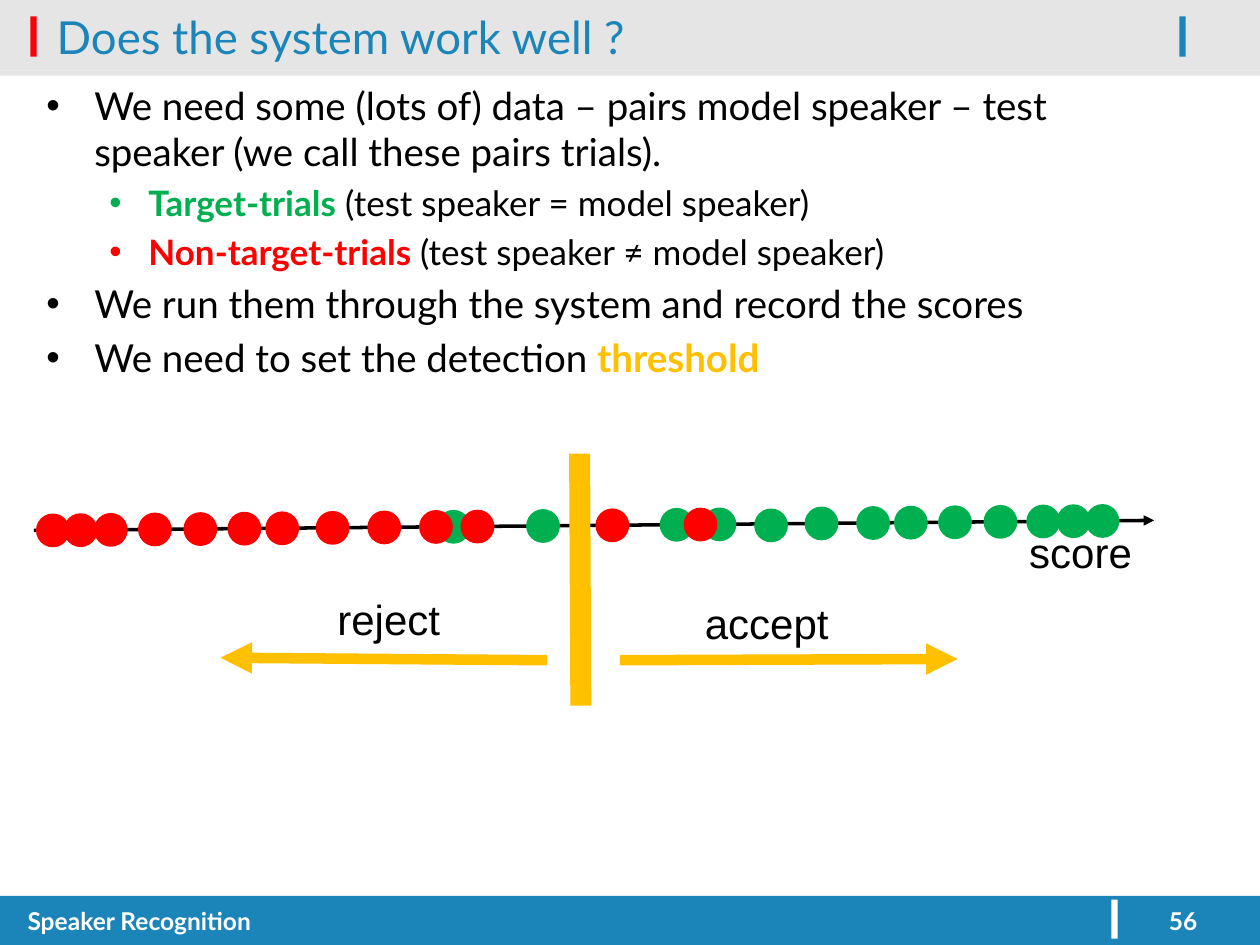
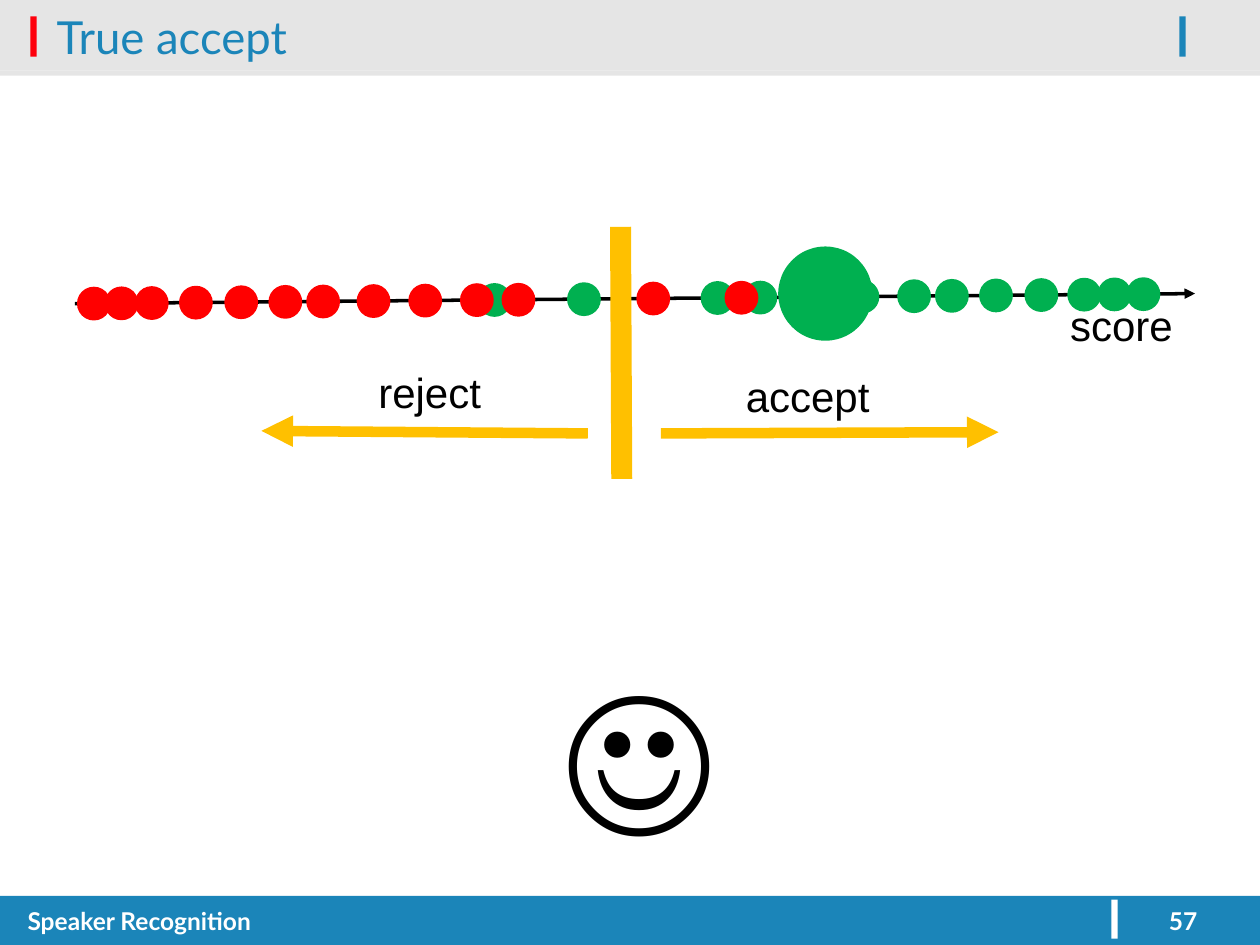
from lxml.etree import SubElement as Sub
from pptx import Presentation
from pptx.dml.color import RGBColor as Rgb
from pptx.enum.shapes import MSO_CONNECTOR as Link, MSO_SHAPE as Form
from pptx.enum.text import MSO_ANCHOR as Anchor, MSO_AUTO_SIZE as Fit, PP_ALIGN as Align
from pptx.oxml.ns import qn
from pptx.util import Inches, Pt

INK = {
    "blue": "1B85B9", "mark": "FE000C", "band": "E5E5E5", "white": "FFFFFF",
    "black": "000000", "green": "00B050", "red": "FF0000", "gold": "FFC000",
}
BANDS = [
    (0, 0, 100, 5.6, "band"), (0, 5.6, 100, 0.4, "band"),
    (0, 71.1, 100, 3.9, "blue"), (2.4, 1.3, 0.5, 3.2, "mark"),
    (93.6, 1.3, 0.5, 3.2, "blue"), (88.2, 71.4, 0.5, 3.1, "white"),
]
TARGET = [32.1, 39.2, 49.8, 53.2, 61.3, 65.4, 68.4, 71.9, 75.5, 78.9, 81.3, 83.6]
OTHER = [0.3, 2.5, 4.9, 8.4, 12, 15.5, 18.5, 22.5, 26.6, 30.7, 34, 44.7, 51.7]
SPAN, START, END = 88.9, 6.1, 5.3
DOT = 2.4
POINTS = [
    (0, [("We need some (lots of) data – pairs model speaker – test speaker "
          "(we call these pairs trials).", None)]),
    (1, [("Target-trials", "green"), (" (test speaker = model speaker)", None)]),
    (1, [("Non-target-trials ", "red"), ("(test speaker ≠ model speaker)", None)]),
    (0, [("We run them through the system and record the scores", None)]),
    (0, [("We need to set the detection ", None), ("threshold", "gold")]),
]
LEVELS = [(22, 0.38, 0.38), (20, 0.81, 0.31)]


class Deck:
    cols, rows = 100, 75

    def __init__(self):
        self.prs = Presentation()
        self.prs.slide_width = Inches(10)
        self.prs.slide_height = Inches(7.5)
        self.page = None

    def cell(self, x, y):
        return (int(self.prs.slide_width * x / self.cols),
                int(self.prs.slide_height * y / self.rows))

    def style(self, run, size, ink="black", bold=False, face="Lato"):
        run.font.name = face
        run.font.size = Pt(size)
        run.font.bold = bold
        run.font.color.rgb = Rgb.from_string(INK[ink])

    def start(self, title, number):
        self.page = self.prs.slides.add_slide(self.prs.slide_layouts[5])
        for x, y, w, h, ink in BANDS:
            self.shape(Form.RECTANGLE, x, y, w, h, ink)
        head = self.page.shapes.title
        self.page.shapes._spTree.append(head._element)
        head.left, head.top = self.cell(3.5, -1.1)
        head.width, head.height = self.cell(89, 7.9)
        frame = head.text_frame
        frame.text = title
        frame.auto_size = Fit.NONE
        frame.vertical_anchor = Anchor.MIDDLE
        frame.paragraphs[0].alignment = Align.LEFT
        self.style(frame.paragraphs[0].runs[0], 26, "blue")
        self.text("Speaker Recognition", 1.2, 71.4, 85.8, 3.6, 14, Align.LEFT, "white", True)
        self.text(number, 89.4, 71.4, 9, 3.6, 14, Align.CENTER, "white", True)

    def shape(self, form, x, y, w, h, ink, edge=0):
        item = self.page.shapes.add_shape(form, *self.cell(x, y), *self.cell(w, h))
        item.shadow.inherit = False
        item.fill.solid()
        item.fill.fore_color.rgb = Rgb.from_string(INK[ink])
        if edge:
            item.line.color.rgb = Rgb.from_string(INK[ink])
            item.line.width = Pt(edge)
        else:
            item.line.fill.background()

    def box(self, x, y, w, h):
        frame = self.page.shapes.add_textbox(*self.cell(x, y), *self.cell(w, h)).text_frame
        frame.word_wrap = True
        return frame

    def text(self, words, x, y, w, h, size, align=Align.CENTER,
             ink="black", bold=False, face="Lato"):
        frame = self.box(x, y, w, h)
        frame.text = words
        para = frame.paragraphs[0]
        para.alignment = align
        self.style(para.runs[0], size, ink, bold, face)

    def list(self, points, x, y, w, h):
        frame = self.box(x, y, w, h)
        for i, (level, parts) in enumerate(points):
            para = frame.add_paragraph() if i else frame.paragraphs[0]
            size, left, hang = LEVELS[level]
            para.level = level
            para.space_before = Pt(size * 0.2)
            props = para._p.get_or_add_pPr()
            props.set("marL", str(Inches(left)))
            props.set("indent", str(-Inches(hang)))
            Sub(props, qn("a:buFont")).set("typeface", "Arial")
            Sub(props, qn("a:buChar")).set("char", "•")
            for words, ink in parts:
                run = para.add_run()
                run.text = words
                self.style(run, size, ink or "black", bool(ink))

    def line(self, x, y, to_x, to_y, ink, width, arrow=True):
        item = self.page.shapes.add_connector(
            Link.STRAIGHT, *self.cell(x, y), *self.cell(to_x, to_y))
        item.line.color.rgb = Rgb.from_string(INK[ink])
        item.line.width = Pt(width)
        if arrow:
            Sub(item.line._get_or_add_ln(), qn("a:tailEnd")).set("type", "triangle")
        Sub(item._element.spPr, qn("a:effectLst"))

    def dot(self, x, y, size, ink):
        self.shape(Form.OVAL, x, y, size, size, ink, 2)

    def scale(self, x, y, hit):
        self.line(x, y + START, x + SPAN, y + END, "black", 2)
        self.text("score", x + 74.8, y + 5.3, 16.5, 5.1, 24, face="Arial")
        for ink, spots in (("green", TARGET), ("red", OTHER)):
            for spot in spots:
                mid = START + (END - START) * spot / SPAN
                self.dot(x + spot, y + mid - DOT / 2, DOT, ink)
        left, top, size = hit
        self.dot(x + left, y + top, size, "green")
        self.line(x + 43.3, y, x + 43.4, y + 20, "gold", 12, False)
        self.line(x + 46.5, y + 16.4, x + 73.3, y + 16.3, "gold", 6)
        self.line(x + 40.7, y + 16.4, x + 14.8, y + 16.2, "gold", 6)
        for word, left, top in (("accept", 49.9, 10.9), ("reject", 19.9, 10.6)):
            self.text(word, x + left, y + top, 16.5, 5.1, 24, face="Arial")


def main():
    deck = Deck()
    deck.start("Does the system work well ?", "56")
    deck.list(POINTS, 2.7, 6, 91.3, 58.3)
    deck.scale(2.7, 36, (57.3, 4.5, DOT))
    deck.start("True accept", "57")
    deck.text("☺", 3.5, 50.8, 94.5, 16, 96)
    deck.scale(5.95, 18, (55.95, 1.7, 3 * DOT))
    deck.prs.save("out.pptx")


if __name__ == "__main__":
    main()
